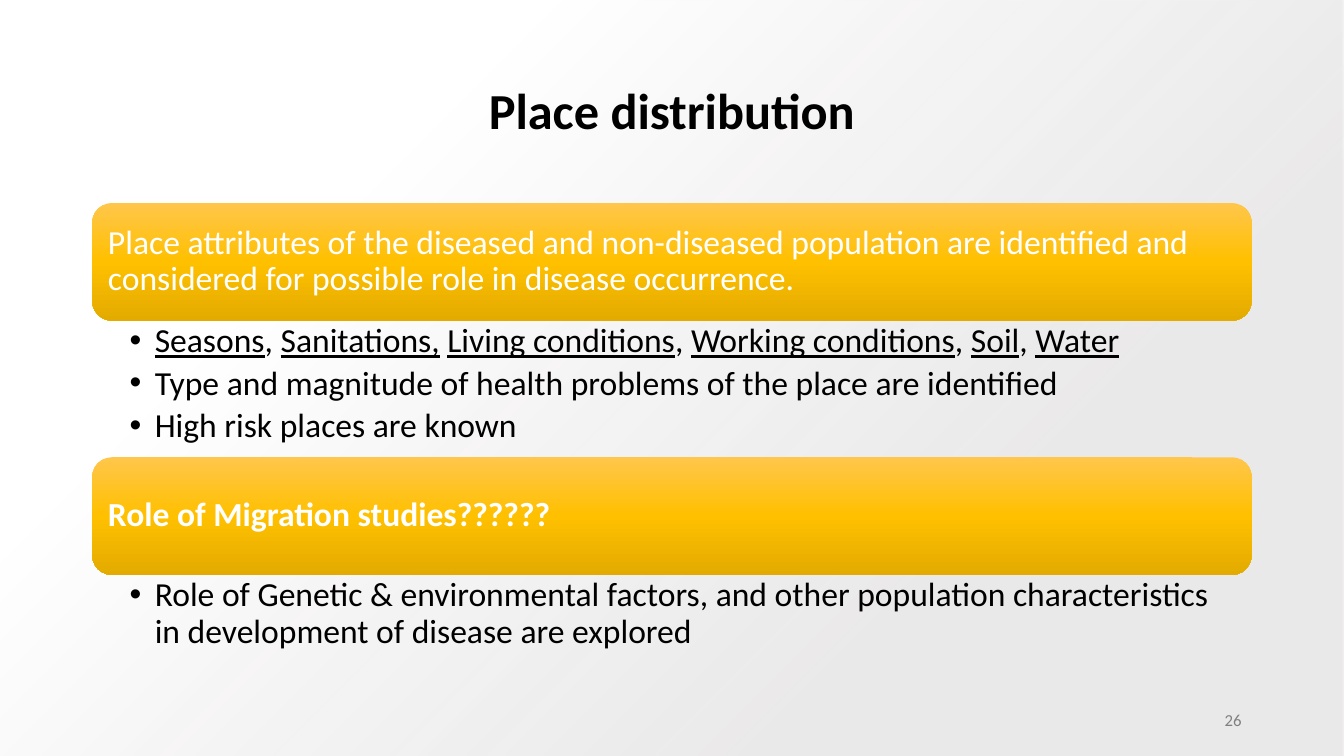
import pptx
import pptx.dml.color
import pptx.enum.shapes
import pptx.enum.text
import pptx.oxml
import pptx.oxml.ns
import pptx.util
from lxml import etree

Pt = pptx.util.Pt
RGBColor = pptx.dml.color.RGBColor
MSO_SHAPE = pptx.enum.shapes.MSO_SHAPE
PP_ALIGN = pptx.enum.text.PP_ALIGN
MSO_ANCHOR = pptx.enum.text.MSO_ANCHOR
qn = pptx.oxml.ns.qn

BLACK = RGBColor(0x00, 0x00, 0x00)
WHITE = RGBColor(0xFF, 0xFF, 0xFF)
GREY = RGBColor(0x80, 0x80, 0x80)
MIST = RGBColor(0xE7, 0xE6, 0xE6)
GOLD_LIGHT = RGBColor(0xFF, 0xC6, 0x4B)
GOLD = RGBColor(0xFF, 0xC0, 0x00)
GOLD_DARK = RGBColor(0xE3, 0xAB, 0x00)

SLIDE_W, SLIDE_H = 960, 540
LEFT, WIDTH = 66, 828
STACK_TOP, BAR_H = 145, 84

SECTIONS = [
    ("Place attributes of the diseased and non-diseased population are identified "
     "and considered for possible role in disease occurrence.", False, 97.6,
     [["_Seasons", ", ", "_Sanitations,", " ", "_Living conditions", ", ",
       "_Working conditions", ", ", "_Soil", ", ", "_Water"],
      ["Type and magnitude of health problems of the place are identified"],
      ["High risk places are known"]]),
    ("Role of Migration studies??????", True, 74,
     [["Role of Genetic & environmental factors, and other population "
       "characteristics in development of disease are explored"]]),
]


class SlideBuilder:
    def __init__(self, slide, font="Calibri", body_size=24):
        self.slide = slide
        self.font = font
        self.body_size = body_size

    def style(self, p, size, color, bold=False):
        for r in p.runs:
            r.font.name = self.font
            r.font.size = Pt(size)
            r.font.bold = bold
            r.font.color.rgb = color

    def gradient(self, sp, stops, direction):
        """Fill with (position, colour, alpha) stops, all in percent; direction is XML."""
        sp.fill.gradient()
        grad = sp._element.spPr.find(qn("a:gradFill"))
        for child in list(grad):
            grad.remove(child)
        gs_list = etree.SubElement(grad, qn("a:gsLst"))
        for position, color, alpha in stops:
            gs = etree.SubElement(gs_list, qn("a:gs"), pos=str(position * 1000))
            clr = etree.SubElement(gs, qn("a:srgbClr"), val=str(color))
            if alpha < 100:
                etree.SubElement(clr, qn("a:alpha"), val=str(alpha * 1000))
        ns = 'xmlns:a="http://schemas.openxmlformats.org/drawingml/2006/main"'
        grad.append(pptx.oxml.parse_xml(direction.format(ns=ns)))

    def shape(self, kind, x, y, w, h):
        sp = self.slide.shapes.add_shape(kind, Pt(x), Pt(y), Pt(w), Pt(h))
        sp.shadow.inherit = False
        sp.line.fill.background()
        return sp

    def backdrop(self):
        sp = self.shape(MSO_SHAPE.RECTANGLE, 0, 0, SLIDE_W, SLIDE_H)
        self.gradient(sp, [(28, MIST, 84), (74, WHITE, 100)],
                      '<a:path {ns} path="circle">'
                      '<a:fillToRect l="100000" t="100000"/></a:path>')

    def text(self, text, x, y, w, h, size, color, align, bold=False):
        tf = self.slide.shapes.add_textbox(Pt(x), Pt(y), Pt(w), Pt(h)).text_frame
        tf.word_wrap = True
        tf.vertical_anchor = MSO_ANCHOR.MIDDLE
        p = tf.paragraphs[0]
        p.text = text
        p.alignment = align
        p.line_spacing = 0.9
        self.style(p, size, color, bold)

    def bar(self, text, y, bold):
        sp = self.shape(MSO_SHAPE.ROUNDED_RECTANGLE, LEFT, y, WIDTH, BAR_H)
        self.gradient(sp, [(0, GOLD_LIGHT, 100), (50, GOLD, 100), (100, GOLD_DARK, 100)],
                      '<a:lin {ns} ang="5400000" scaled="0"/>')
        tf = sp.text_frame
        tf.word_wrap = True
        tf.vertical_anchor = MSO_ANCHOR.MIDDLE
        p = tf.paragraphs[0]
        p.text = text
        p.alignment = PP_ALIGN.LEFT
        p.line_spacing = 0.9
        self.style(p, self.body_size, WHITE, bold)

    def bullets(self, items, y, h):
        """Each item is a list of pieces; a leading underscore underlines a piece."""
        tf = self.slide.shapes.add_textbox(Pt(LEFT), Pt(y), Pt(WIDTH), Pt(h)).text_frame
        tf.word_wrap = True
        tf.margin_left, tf.margin_right = Pt(26.6), Pt(13.7)
        tf.margin_top = tf.margin_bottom = Pt(2.2)
        for i, pieces in enumerate(items):
            p = tf.add_paragraph() if i else tf.paragraphs[0]
            for piece in pieces:
                r = p.add_run()
                r.text = piece.removeprefix("_")
                r.font.underline = piece.startswith("_")
            p.line_spacing = 0.9
            p.space_after = Pt(4.3)
            self.style(p, self.body_size, BLACK)
            pPr = p._p.get_or_add_pPr()
            pPr.set("marL", str(Pt(18)))
            pPr.set("indent", str(-Pt(18)))
            etree.SubElement(pPr, qn("a:buFont"), typeface="Arial")
            etree.SubElement(pPr, qn("a:buChar"), char="•")


def main():
    prs = pptx.Presentation()
    prs.slide_width, prs.slide_height = Pt(SLIDE_W), Pt(SLIDE_H)
    builder = SlideBuilder(prs.slides.add_slide(prs.slide_layouts[6]))
    builder.backdrop()
    builder.text("Place distribution", LEFT, 28.8, WIDTH, 104.4, 36, BLACK,
                 PP_ALIGN.CENTER, bold=True)
    builder.text("26", 678, 500.5, 216, 28.8, 12, GREY, PP_ALIGN.RIGHT)
    y = STACK_TOP
    for heading, bold, list_h, items in SECTIONS:
        builder.bar(heading, y, bold)
        builder.bullets(items, y + BAR_H, list_h)
        y += BAR_H + list_h
    prs.save("out.pptx")


if __name__ == "__main__":
    main()
